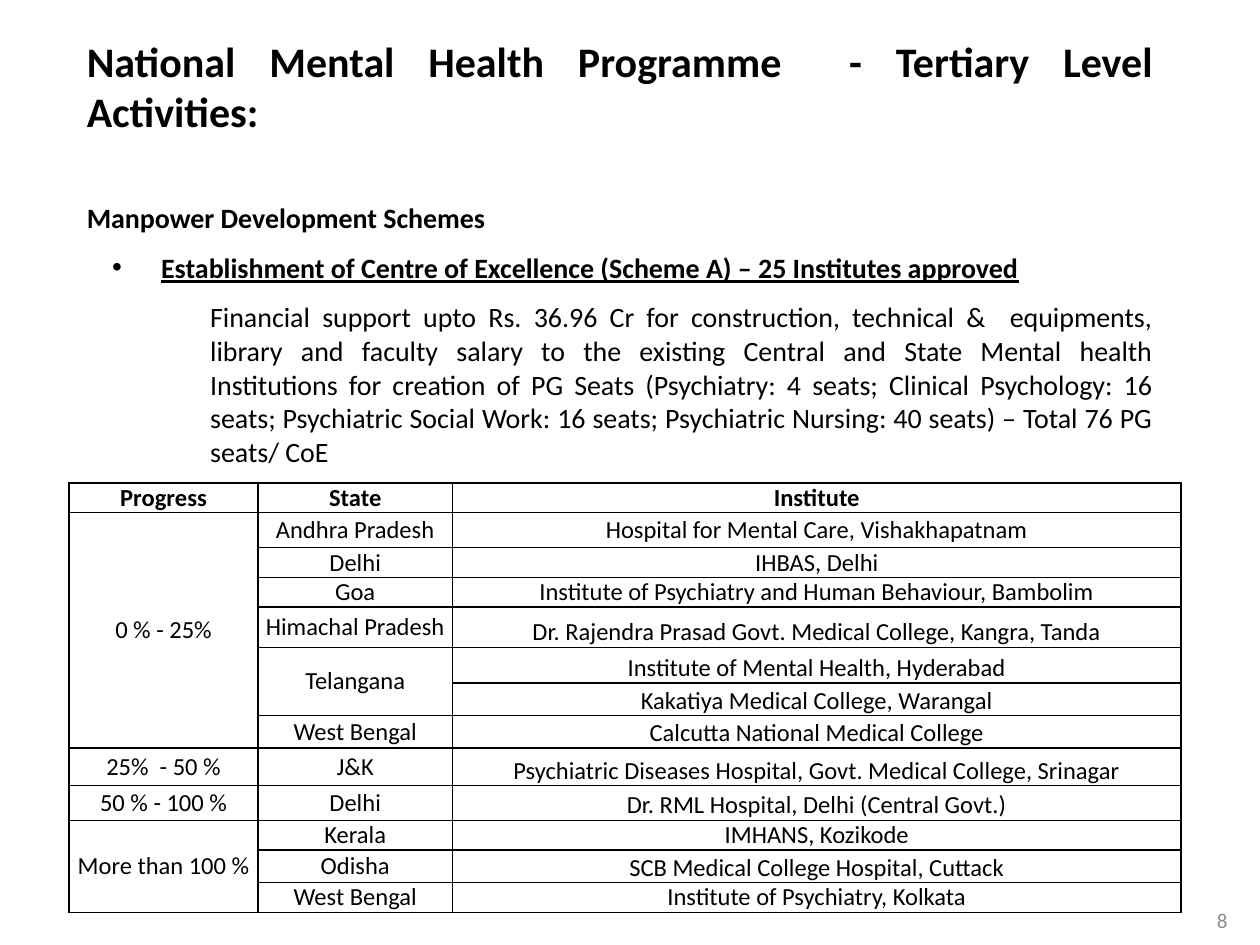
"""Build the slide on tertiary level activities of the mental health programme."""
from typing import NamedTuple

from lxml import etree
from pptx import Presentation
from pptx.dml.color import RGBColor
from pptx.enum.text import MSO_ANCHOR, PP_ALIGN
from pptx.oxml.ns import qn
from pptx.util import Pt

BLACK = RGBColor(0x00, 0x00, 0x00)
GREY = RGBColor(0x8C, 0x8C, 0x8C)
FONT = "Calibri"
TOP, MIDDLE, BOTTOM = MSO_ANCHOR.TOP, MSO_ANCHOR.MIDDLE, MSO_ANCHOR.BOTTOM
CENTER, RIGHT, JUSTIFY = PP_ALIGN.CENTER, PP_ALIGN.RIGHT, PP_ALIGN.JUSTIFY


class Para(NamedTuple):
    text: str
    size: float = 16
    bold: bool = True
    underline: bool = False
    margin: float = 6.5
    indent: float = 0
    before: float = 3.2
    bullet: str = ""


class Row(NamedTuple):
    height: float
    progress: str
    state: str
    institute: str
    anchor: MSO_ANCHOR = BOTTOM


class Span(NamedTuple):
    col: int
    first: int
    last: int


PARAS = [
    Para("National Mental Health Programme  - Tertiary Level Activities:", size=24, before=4.8),
    Para("Manpower Development Schemes", before=31),
    Para("Establishment of Centre of Excellence (Scheme A) – 25 Institutes approved",
         underline=True, margin=49, indent=-28, bullet="•"),
    Para("Financial support upto Rs. 36.96 Cr for construction, technical &  equipments, "
         "library and faculty salary to the existing Central and State Mental health "
         "Institutions for creation of PG Seats (Psychiatry: 4 seats; Clinical Psychology: 16 "
         "seats; Psychiatric Social Work: 16 seats; Psychiatric Nursing: 40 seats) – Total 76 PG "
         "seats/ CoE", bold=False, margin=77),
]
COL_WIDTHS = [108, 111, 416.5]
ROWS = [
    Row(17, "Progress", "State", "Institute", TOP),
    Row(20, "0 % - 25%", "Andhra Pradesh", "Hospital for Mental Care, Vishakhapatnam", MIDDLE),
    Row(17, "", "Delhi", "IHBAS, Delhi", MIDDLE),
    Row(17, "", "Goa", "Institute of Psychiatry and Human Behaviour, Bambolim"),
    Row(23, "", "Himachal Pradesh", "Dr. Rajendra Prasad Govt. Medical College, Kangra, Tanda"),
    Row(20.5, "", "Telangana", "Institute of Mental Health, Hyderabad"),
    Row(18.5, "", "", "Kakatiya Medical College, Warangal"),
    Row(18.5, "", "West Bengal", "Calcutta National Medical College"),
    Row(21.5, "25%  - 50 %", "J&K", "Psychiatric Diseases Hospital, Govt. Medical College, Srinagar"),
    Row(20, "50 % - 100 %", "Delhi", "Dr. RML Hospital, Delhi (Central Govt.)"),
    Row(17, "More than 100 %", "Kerala", "IMHANS, Kozikode"),
    Row(18.5, "", "Odisha", "SCB Medical College Hospital, Cuttack"),
    Row(17, "", "West Bengal", "Institute of Psychiatry, Kolkata"),
]
SPANS = [Span(0, 1, 7), Span(1, 5, 6), Span(0, 10, 12)]


def write(p, text: str, size: float, align: PP_ALIGN, bold: bool = False,
          color: RGBColor = BLACK, underline: bool = False) -> None:
    """Fill one paragraph and format its runs."""
    p.text = text
    p.alignment = align
    for r in p.runs:
        r.font.name = FONT
        r.font.size = Pt(size)
        r.font.bold = bold
        r.font.underline = underline
        r.font.color.rgb = color


def add_box(s, left: float, top: float, width: float, height: float):
    """Add a wrapping text box and return its text frame."""
    tf = s.shapes.add_textbox(Pt(left), Pt(top), Pt(width), Pt(height)).text_frame
    tf.word_wrap = True
    return tf


def add_body(s, paras: list[Para]) -> None:
    """Add the heading and the indented paragraphs."""
    tf = add_box(s, 36, 16.5, 630, 460)
    for i, para in enumerate(paras):
        p = tf.add_paragraph() if i else tf.paragraphs[0]
        write(p, para.text, para.size, JUSTIFY, para.bold, underline=para.underline)
        p.space_before = Pt(para.before)
        p.space_after = Pt(6)
        pPr = p._p.get_or_add_pPr()
        pPr.set("marL", str(Pt(para.margin)))
        pPr.set("indent", str(Pt(para.indent)))
        if para.bullet:
            etree.SubElement(pPr, qn("a:buFont")).set("typeface", "Arial")
            etree.SubElement(pPr, qn("a:buChar")).set("char", para.bullet)


def add_borders(cell) -> None:
    """Draw a thin black line on all four sides of a cell."""
    tcPr = cell._tc.get_or_add_tcPr()
    for side in ("a:lnL", "a:lnR", "a:lnT", "a:lnB"):
        ln = etree.SubElement(tcPr, qn(side), w=str(Pt(1)))
        fill = etree.SubElement(ln, qn("a:solidFill"))
        etree.SubElement(fill, qn("a:srgbClr")).set("val", str(BLACK))


def add_progress_table(s, rows: list[Row], spans: list[Span]) -> None:
    """Add the table of institutes grouped by progress."""
    width, height = sum(COL_WIDTHS), sum(row.height for row in rows)
    table = s.shapes.add_table(len(rows), len(COL_WIDTHS), Pt(39.5), Pt(276),
                               Pt(width), Pt(height)).table
    table.horz_banding = False
    table.first_row = False
    for column, col_width in zip(table.columns, COL_WIDTHS):
        column.width = Pt(col_width)
    for i, row in enumerate(rows):
        table.rows[i].height = Pt(row.height)
        side_anchor = MIDDLE if i else TOP
        anchors = (side_anchor, side_anchor, row.anchor)
        texts = (row.progress, row.state, row.institute)
        for cell, text, anchor in zip(table.rows[i].cells, texts, anchors):
            cell.margin_left = cell.margin_right = cell.margin_top = cell.margin_bottom = 0
            cell.vertical_anchor = anchor
            write(cell.text_frame.paragraphs[0], text, 14, CENTER, bold=i == 0)
            add_borders(cell)
            cell.fill.background()
    for span in spans:
        table.cell(span.first, span.col).merge(table.cell(span.last, span.col))


def add_page_number(s, number: str) -> None:
    """Add the page number at the bottom right."""
    tf = add_box(s, 540.5, 511, 168, 29)
    tf.vertical_anchor = MIDDLE
    write(tf.paragraphs[0], number, 12, RIGHT, color=GREY)


def main() -> None:
    """Build and save the slide."""
    prs = Presentation()
    prs.slide_width, prs.slide_height = Pt(720), Pt(540)
    s = prs.slides.add_slide(prs.slide_layouts[6])
    add_body(s, PARAS)
    add_page_number(s, "8")
    add_progress_table(s, ROWS, SPANS)
    prs.save("out.pptx")


if __name__ == "__main__":
    main()
